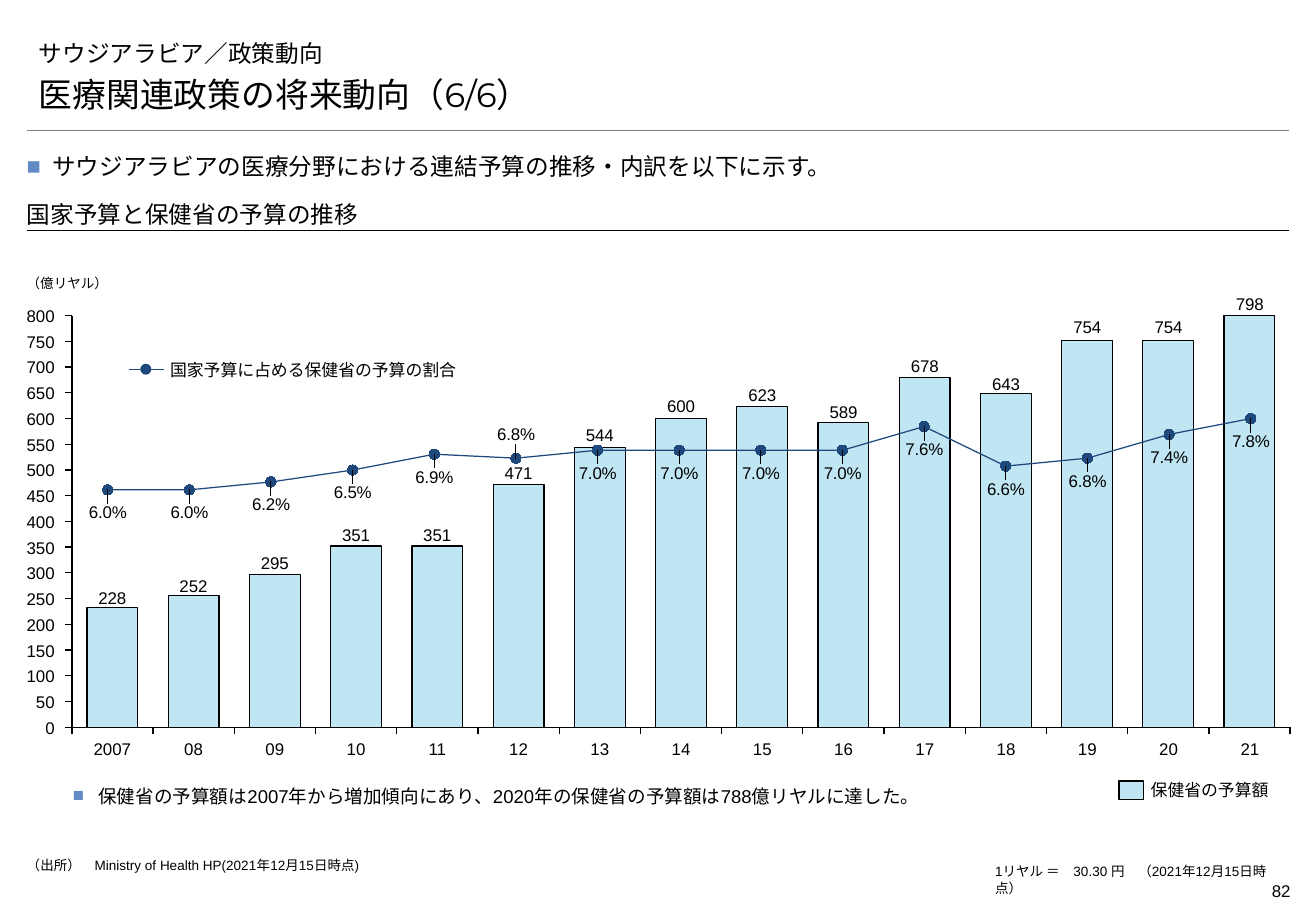
"""Build the slide on the trend of the Saudi national and health ministry budgets."""
from pptx import Presentation
from pptx.chart.data import CategoryChartData, XyChartData
from pptx.dml.color import RGBColor
from pptx.enum.chart import XL_CHART_TYPE as Chart, XL_MARKER_STYLE as Marker
from pptx.enum.chart import XL_TICK_LABEL_POSITION as TickLabel, XL_TICK_MARK as Tick
from pptx.enum.shapes import MSO_CONNECTOR as Connector, MSO_SHAPE as Shape
from pptx.enum.text import MSO_ANCHOR as Anchor, PP_ALIGN as Align
from pptx.oxml import parse_xml
from pptx.oxml.ns import nsdecls, qn
from pptx.util import Inches, Pt

BLACK, NAVY, SKY, BULLET = "000000", "1F497D", "C0E6F4", "5F8AC3"
LEFT, RIGHT = 0.22, 10.61
CONTENT = RIGHT - LEFT
AXIS_LEFT, AXIS_TOP, AXIS_WIDTH, AXIS_HEIGHT = 0.59, 2.6, 10.03, 3.39
AXIS_BOTTOM = AXIS_TOP + AXIS_HEIGHT
AXIS_MAX, AXIS_STEP = 800, 50
LABEL_WIDTH, LABEL_HEIGHT = 0.5, 0.17

budgets = [228, 252, 295, 351, 351, 471, 544, 600, 623, 589, 678, 643, 754, 754, 798]
ratios = [6.0, 6.0, 6.2, 6.5, 6.9, 6.8, 7.0, 7.0, 7.0, 7.0, 7.6, 6.6, 6.8, 7.4, 7.8]
years = range(2007, 2007 + len(budgets))
pitch = AXIS_WIDTH / len(budgets)

deck = Presentation()
deck.slide_width, deck.slide_height = Inches(10.83), Inches(7.5)
page = deck.slides.add_slide(deck.slide_layouts[6])


def color(code):
    return RGBColor.from_string(code)


def add_text(text, left, top, width, height, size=10, font="Arial", align=Align.LEFT,
             anchor=Anchor.TOP, insets=(0, 0, 0, 0), wrap=False, bullet=False):
    box = page.shapes.add_textbox(*map(Inches, (left, top, width, height)))
    frame = box.text_frame
    frame.word_wrap, frame.vertical_anchor = wrap, anchor
    frame.margin_left, frame.margin_top, frame.margin_right, frame.margin_bottom = map(Inches, insets)
    para = frame.paragraphs[0]
    para.alignment = align
    span = para.add_run()
    span.text = text
    span.font.size, span.font.name = Pt(size), font
    span.font.color.rgb = color(BLACK)
    if bullet:
        marks = para._p.get_or_add_pPr()
        marks.set("marL", str(Inches(0.21)))
        marks.set("indent", str(Inches(-0.21)))
        for mark in (f'<a:buClr {nsdecls("a")}><a:srgbClr val="{BULLET}"/></a:buClr>',
                     f'<a:buFont {nsdecls("a")} typeface="Arial"/>',
                     f'<a:buChar {nsdecls("a")} char="■"/>'):
            marks.append(parse_xml(mark))
        para.line_spacing, para.space_after = 1.1, Pt(2)
        span._r.get_or_add_rPr().append(parse_xml(f'<a:ea {nsdecls("a")} typeface="{font}"/>'))


budget_data = CategoryChartData()
budget_data.categories = [str(number + 1) for number in range(len(budgets))]
budget_data.add_series("保健省の予算額", [round(budget * 100 / max(budgets)) for budget in budgets])
budget_chart = page.shapes.add_chart(
    Chart.COLUMN_STACKED, *map(Inches, (0.5, 2.51, 10.21, 3.57)), budget_data).chart
bars = budget_chart.plots[0]
bars.gap_width, bars.overlap = 60, 100
bar_format = bars.series[0].format
bar_format.fill.solid()
bar_format.fill.fore_color.rgb = color(SKY)
bar_format.line.color.rgb = color(BLACK)
bar_format.line.width = Pt(0.75)
budget_chart.value_axis.minimum_scale, budget_chart.value_axis.maximum_scale = 0, 100
budget_chart.value_axis.major_unit = AXIS_STEP * 100 / AXIS_MAX

for step in range(0, AXIS_MAX + 1, AXIS_STEP):
    middle = AXIS_BOTTOM - AXIS_HEIGHT * step / AXIS_MAX
    add_text(str(step), 0.45 - LABEL_WIDTH, middle - LABEL_HEIGHT / 2, LABEL_WIDTH, LABEL_HEIGHT,
             align=Align.RIGHT, anchor=Anchor.MIDDLE)
for column, (year, budget) in enumerate(zip(years, budgets)):
    label_left = AXIS_LEFT + pitch * (column + 0.5) - LABEL_WIDTH / 2
    bar_top = AXIS_BOTTOM - AXIS_HEIGHT * budget / AXIS_MAX
    add_text(str(budget), label_left, bar_top - 0.02 - LABEL_HEIGHT, LABEL_WIDTH, LABEL_HEIGHT,
             align=Align.CENTER, anchor=Anchor.BOTTOM)
    name = str(year) if column == 0 else f"{year % 100:02d}"
    add_text(name, label_left, 6.08, LABEL_WIDTH, LABEL_HEIGHT, align=Align.CENTER)

ratio_data = XyChartData()
ratio_points = ratio_data.add_series("国家予算に占める保健省の予算の割合")
for year, ratio in zip(years, ratios):
    ratio_points.add_data_point(year, ratio)
ratio_chart = page.shapes.add_chart(
    Chart.XY_SCATTER_LINES, *map(Inches, (0.68, 3.35, 9.82, 2.73)), ratio_data).chart
ratio_line = ratio_chart.plots[0].series[0]
ratio_line.format.line.color.rgb = color(NAVY)
ratio_line.format.line.width = Pt(0.75)
ratio_line.marker.style, ratio_line.marker.size = Marker.CIRCLE, 6
ratio_line.marker.format.fill.solid()
ratio_line.marker.format.fill.fore_color.rgb = color(NAVY)
ratio_line.marker.format.line.color.rgb = color(NAVY)
ratio_chart.category_axis.minimum_scale = years[0]
ratio_chart.category_axis.maximum_scale = years[-1]
ratio_chart.value_axis.minimum_scale, ratio_chart.value_axis.maximum_scale = 0, 7.82

number_format = '<c:numFmt formatCode="0.0&quot;%&quot;" sourceLinked="0"/>'
shown = ('<c:showLegendKey val="0"/><c:showVal val="1"/><c:showCatName val="0"/>'
         '<c:showSerName val="0"/><c:showPercent val="0"/><c:showBubbleSize val="0"/>')
labels = ""
for index, year in enumerate(years):
    shift = -0.07 if year == 2012 else 0.07
    labels += (f'<c:dLbl><c:idx val="{index}"/><c:layout><c:manualLayout><c:x val="0"/>'
               f'<c:y val="{shift}"/></c:manualLayout></c:layout>{number_format}'
               f'<c:dLblPos val="ctr"/>{shown}</c:dLbl>')
leaders = ('<c:extLst><c:ext uri="{CE6537A1-D6FC-4f65-9D91-7224C49458BB}" '
           'xmlns:c15="http://schemas.microsoft.com/office/drawing/2012/chart">'
           '<c15:showLeaderLines val="1"/></c:ext></c:extLst>')
ratio_line._element.find(qn("c:xVal")).addprevious(parse_xml(
    f'<c:dLbls {nsdecls("c")}>{labels}{number_format}{shown}{leaders}</c:dLbls>'))
ratio_line._element.get_or_add_smooth().val = False

for chart, tick, layout in ((budget_chart, Tick.OUTSIDE, (0.009, 0.025, 0.982, 0.949)),
                            (ratio_chart, Tick.NONE, (0.021, 0.033, 0.958, 0.934))):
    chart.has_legend = chart.has_title = False
    chart.plots[0].vary_by_categories = False
    chart.font.size, chart.font.name = Pt(10), "Arial"
    chart.font.color.rgb = color(BLACK)
    for axis in (chart.category_axis, chart.value_axis):
        axis.has_major_gridlines = False
        axis.major_tick_mark, axis.minor_tick_mark = tick, Tick.NONE
        axis.tick_label_position = TickLabel.NONE
        axis.format.line.color.rgb = color(BLACK)
        axis.format.line.width = Pt(0.75)
    area = chart._chartSpace.find(".//" + qn("c:plotArea"))
    for default in area.findall(qn("c:layout")):
        area.remove(default)
    sizes = "".join(f'<c:{key} val="{share}"/>' for key, share in zip("xywh", layout))
    area.insert(0, parse_xml(
        f'<c:layout {nsdecls("c")}><c:manualLayout><c:layoutTarget val="inner"/>'
        f'<c:xMode val="edge"/><c:yMode val="edge"/>{sizes}</c:manualLayout></c:layout>'))
ratio_chart.value_axis.visible = False

for start, end, height, code, weight in ((LEFT, RIGHT, 1.07, "7F7F7F", 0.25),
                                         (LEFT, RIGHT, 1.9, BLACK, 0.75),
                                         (1.06, 1.35, 3.04, NAVY, 0.75)):
    line = page.shapes.add_connector(
        Connector.STRAIGHT, *map(Inches, (start, height, end, height)))
    line.line.color.rgb, line.line.width = color(code), Pt(weight)
    line._element.spPr.append(parse_xml(f'<a:effectLst {nsdecls("a")}/>'))

for kind, place, fill, outline in ((Shape.OVAL, (1.16, 3, 0.08, 0.08), NAVY, NAVY),
                                   (Shape.RECTANGLE, (9.21, 6.43, 0.2, 0.15), SKY, BLACK)):
    key = page.shapes.add_shape(kind, *map(Inches, place))
    key.shadow.inherit = False
    key.fill.solid()
    key.fill.fore_color.rgb = color(fill)
    key.line.color.rgb, key.line.width = color(outline), Pt(0.75)

padding = (0.1, 0.05, 0.1, 0.05)
add_text("サウジアラビア／政策動向", LEFT, 0.21, CONTENT, 0.39, 14, "Montserrat",
         anchor=Anchor.BOTTOM, insets=padding, wrap=True)
add_text("医療関連政策の将来動向（6/6）", LEFT, 0.6, CONTENT, 0.39, 20, "Montserrat",
         anchor=Anchor.BOTTOM, insets=padding, wrap=True)
add_text("サウジアラビアの医療分野における連結予算の推移・内訳を以下に示す。",
         LEFT, 1.23, CONTENT, 0.26, 14, align=Align.JUSTIFY, wrap=True, bullet=True)
add_text("国家予算と保健省の予算の推移", LEFT, 1.65, 10.08, 0.31, 14, "Noto Sans CJK JP",
         anchor=Anchor.BOTTOM, insets=(0, 0.05, 0, 0.08), wrap=True)
add_text("（億リヤル）", LEFT, 2.27, 0.8, 0.13, 8, anchor=Anchor.BOTTOM)
add_text("国家予算に占める保健省の予算の割合", 1.4, 2.96, 2.7, LABEL_HEIGHT, anchor=Anchor.MIDDLE)
add_text("保健省の予算額", 9.47, 6.42, 1.1, LABEL_HEIGHT, anchor=Anchor.MIDDLE)
add_text("保健省の予算額は2007年から増加傾向にあり、2020年の保健省の予算額は788億リヤルに達した。",
         0.6, 6.44, 9.67, 0.19, 11, align=Align.JUSTIFY, wrap=True, bullet=True)
add_text("（出所）　Ministry of Health HP(2021年12月15日時点)", LEFT, 7.06, 9.45, 0.16, 8, wrap=True)
add_text("1リヤル ＝　30.30 円　（2021年12月15日時点）", 8.09, 7.06, 2.52, 0.24, 8,
         insets=padding, wrap=True)
add_text("82", 9.83, 7.2, 0.79, 0.27, align=Align.RIGHT, insets=(0, 0.05, 0, 0.05), wrap=True)

deck.save("out.pptx")
